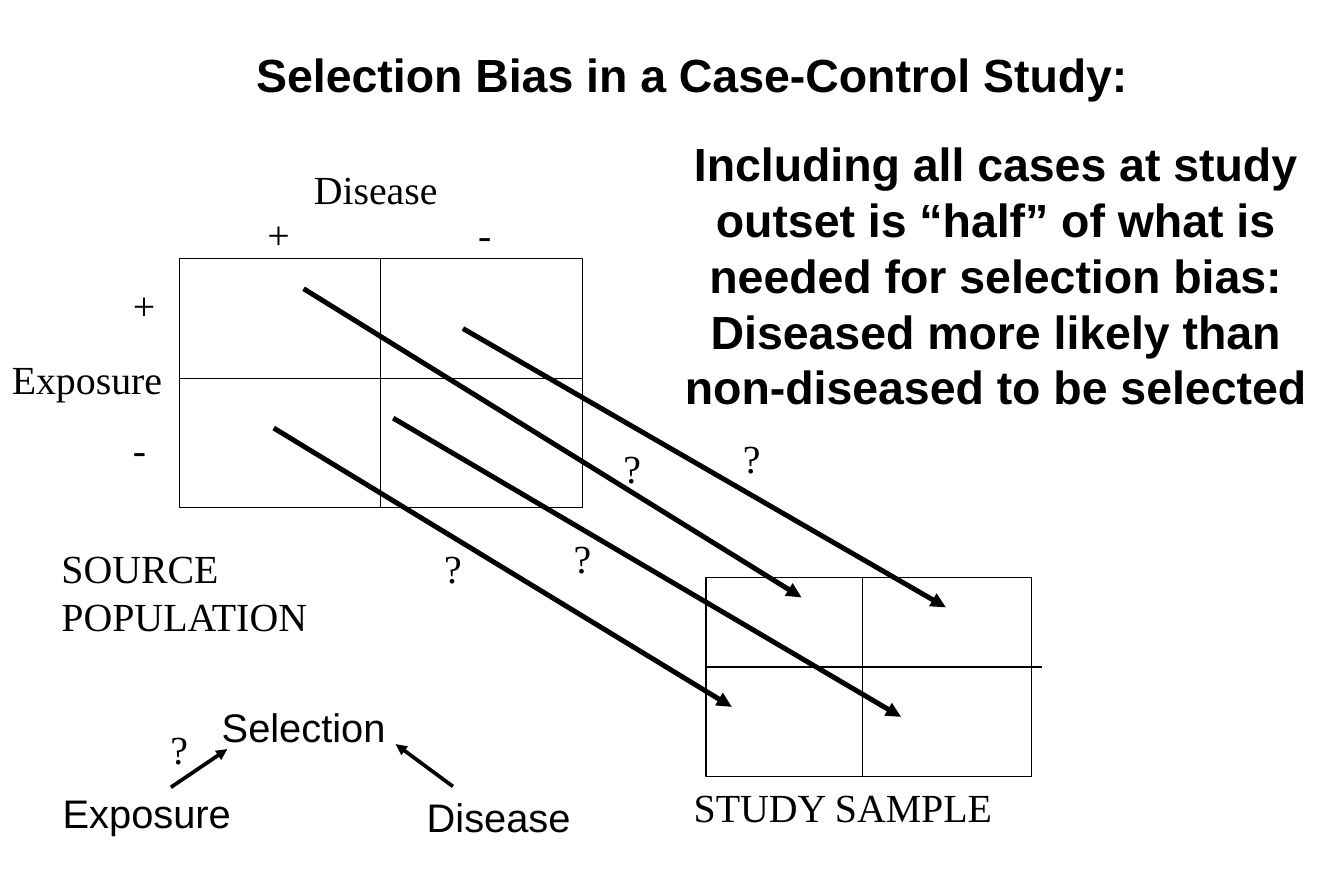
from lxml.etree import SubElement
from pptx import Presentation
from pptx.dml.color import RGBColor
from pptx.enum.shapes import MSO_CONNECTOR as Link, MSO_SHAPE as Preset
from pptx.enum.text import MSO_ANCHOR as Anchor, MSO_AUTO_SIZE as Fit, PP_ALIGN as Align
from pptx.oxml.ns import qn
from pptx.util import Pt

COLORS = {"ink": "000000", "paper": "FFFFFF"}
SANS, SERIF = "Arial", "Times New Roman"


def write_text(frame, text, font=SERIF, size=24, bold=False, align=Align.LEFT, anchor=Anchor.TOP):
    """Fill a text frame with one formatted paragraph."""
    frame.word_wrap = True
    frame.auto_size = Fit.NONE
    frame.vertical_anchor = anchor
    para = frame.paragraphs[0]
    para.alignment = align
    span = para.add_run()
    span.text = text
    span.font.name = font
    span.font.size = Pt(size)
    span.font.bold = bold
    span.font.color.rgb = RGBColor.from_string(COLORS["ink"])


class Painter:
    """Hold the style and the current slide."""

    def __init__(self, deck):
        """Add a title-only page to the deck."""
        self.page = deck.slides.add_slide(deck.slide_layouts[5])
        self.ink = RGBColor.from_string(COLORS["ink"])
        self.page.background.fill.solid()
        self.page.background.fill.fore_color.rgb = RGBColor.from_string(COLORS["paper"])

    def title(self, text, left, top, width, height):
        """Move the title placeholder and fill it."""
        box = self.page.shapes.title
        box.left, box.top, box.width, box.height = map(Pt, (left, top, width, height))
        write_text(box.text_frame, text, font=SANS, size=28, bold=True,
                   align=Align.CENTER, anchor=Anchor.MIDDLE)

    def text(self, text, left, top, width, height=36, **style):
        """Add a text box."""
        box = self.page.shapes.add_textbox(*map(Pt, (left, top, width, height)))
        write_text(box.text_frame, text, **style)

    def frame(self, left, top, width, height):
        """Add an unfilled rectangle."""
        box = self.page.shapes.add_shape(Preset.RECTANGLE, *map(Pt, (left, top, width, height)))
        box.shadow.inherit = False
        box.fill.background()
        box.line.color.rgb = self.ink
        box.line.width = Pt(0.75)
        return box

    def line(self, start, end, weight=0.75, arrow=False):
        """Add a straight line, with an arrowhead at its end on request."""
        link = self.page.shapes.add_connector(Link.STRAIGHT, *map(Pt, start + end))
        link.line.color.rgb = self.ink
        link.line.width = Pt(weight)
        if arrow:
            SubElement(link.line._get_or_add_ln(), qn("a:tailEnd"), type="triangle")
        SubElement(link._element.spPr, qn("a:effectLst"))
        return link


def main():
    """Build the slide and save it."""
    deck = Presentation()
    deck.slide_width, deck.slide_height = Pt(810), Pt(540)
    painter = Painter(deck)

    source = painter.frame(108, 156, 243, 150)
    painter.frame(425.5, 348, 196, 120)
    divider = painter.line((229.5, 156), (229.5, 306))
    divider.begin_connect(source, 0)
    divider.end_connect(source, 2)
    painter.line((108, 228), (351, 228))
    painter.line((520, 348), (520, 468))
    painter.line((425.5, 402), (628, 402))

    for text, left, top, width in [
        ("Disease", 182, 96, 96), ("Exposure", 0, 210, 112),
        ("+", 154, 123, 32), ("-", 281, 123, 32),
        ("+", 73, 165.5, 32), ("-", 73, 252.5, 32),
        ("STUDY SAMPLE", 411, 468, 205),
    ]:
        painter.text(text, left, top, width)
    painter.text("SOURCE POPULATION", 30, 324, 180, 66)

    for start, end in [
        ((279, 198), (570, 366)), ((183, 174), (483, 360)),
        ((237, 252), (543, 432)), ((165, 258), (441, 426)),
    ]:
        painter.line(start, end, weight=3, arrow=True)
    for left, top in [(333, 318), (363, 264), (435, 258), (255, 324), (90, 433)]:
        painter.text("?", left, top, 36, align=Align.CENTER)

    painter.title("Selection Bias in a Case-Control Study:", 12, 23.5, 810, 42)
    painter.text(
        "Including all cases at study outset is “half” of what is needed for selection bias: "
        "Diseased more likely than non-diseased to be selected",
        393, 78, 414, 211, font=SANS, size=28, bold=True, align=Align.CENTER)

    for start, end in [((103, 474.5), (137, 451.5)), ((273, 474), (238.5, 448.5))]:
        painter.line(start, end, weight=2.25, arrow=True)
    for text, center, top in [("Selection", 183, 420), ("Exposure", 88.5, 472), ("Disease", 300.5, 474)]:
        painter.text(text, center - 65, top, 130, font=SANS, align=Align.CENTER)

    deck.save("out.pptx")


if __name__ == "__main__":
    main()
